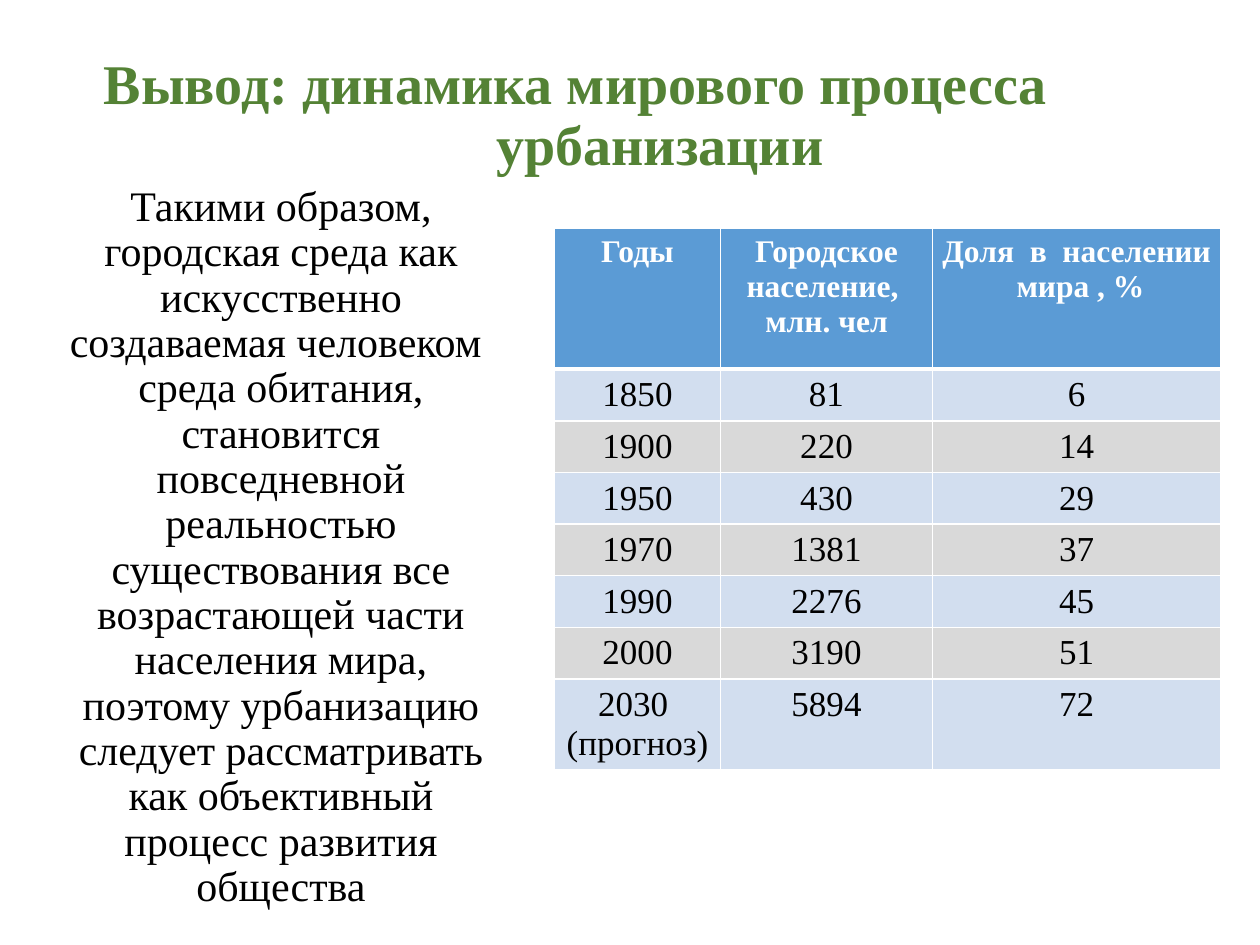
from lxml.etree import SubElement
from pptx import Presentation
from pptx.dml.color import RGBColor
from pptx.enum.text import MSO_ANCHOR as Anchor, MSO_AUTO_SIZE as AutoSize, PP_ALIGN as Align
from pptx.oxml.ns import qn
from pptx.util import Inches, Pt

GREEN = RGBColor(0x54, 0x82, 0x35)
BLUE = RGBColor(0x5B, 0x9B, 0xD5)
PALE_BLUE = RGBColor(0xD2, 0xDE, 0xEF)
GRAY = RGBColor(0xD9, 0xD9, 0xD9)
WHITE = RGBColor(0xFF, 0xFF, 0xFF)
BLACK = RGBColor(0, 0, 0)

TITLE_FONT = {"size": Pt(32), "bold": True, "color": GREEN}
BODY_FONT = {"size": Pt(24), "bold": False, "color": BLACK}
HEADER_FONT = {"size": Pt(18), "bold": True, "color": WHITE}
CELL_FONT = {"size": Pt(20), "bold": False, "color": BLACK}

TITLE = "Вывод: динамика мирового процесса урбанизации"
CONCLUSION = (
    "Такими образом, городская среда как искусственно создаваемая человеком  "
    "среда обитания, становится повседневной реальностью существования все "
    "возрастающей части населения мира, поэтому урбанизацию следует "
    "рассматривать как объективный процесс развития общества"
)
URBANIZATION = [
    ("Годы", "Городское население,  млн. чел", "Доля  в  населении  мира , %"),
    ("1850", "81", "6"),
    ("1900", "220", "14"),
    ("1950", "430", "29"),
    ("1970", "1381", "37"),
    ("1990", "2276", "45"),
    ("2000", "3190", "51"),
    ("2030  (прогноз)", "5894", "72"),
]


def set_all(target, values):
    for name, value in values.items():
        setattr(target, name, value)


def write_centred(frame, wording, font_values):
    paragraph = frame.paragraphs[0]
    paragraph.alignment = Align.CENTER
    run = paragraph.add_run()
    run.text = wording
    values = dict(font_values, name="Times New Roman")
    run.font.color.rgb = values.pop("color")
    set_all(run.font, values)
    return paragraph


def place(holder, box):
    set_all(holder, dict(zip(("left", "top", "width", "height"), map(Inches, box))))


def indent(paragraph, left, first_line):
    properties = paragraph._p.get_or_add_pPr()
    properties.set("marL", str(Inches(left)))
    properties.set("indent", str(Inches(first_line)))
    return properties


def build_title(slide, box):
    heading = slide.shapes.title
    place(heading, box)
    set_all(heading.text_frame, {
        "word_wrap": True, "auto_size": AutoSize.NONE, "vertical_anchor": Anchor.BOTTOM,
        "margin_left": Inches(0.07), "margin_right": Inches(0.75),
    })
    paragraph = write_centred(heading.text_frame, TITLE, TITLE_FONT)
    paragraph.line_spacing = 0.9
    indent(paragraph, 1.34, -1.34)


def build_conclusion(slide, box):
    conclusion = slide.placeholders[1]
    place(conclusion, box)
    set_all(conclusion.text_frame, {
        "word_wrap": True, "auto_size": AutoSize.NONE, "vertical_anchor": Anchor.TOP,
    })
    paragraph = write_centred(conclusion.text_frame, CONCLUSION, BODY_FONT)
    SubElement(indent(paragraph, 0, 0), qn("a:buNone"))
    set_all(paragraph, {"line_spacing": 0.9, "space_before": Pt(0)})


def add_borders(cell, widths):
    properties = cell._tc.get_or_add_tcPr()
    for side, width in widths.items():
        line = SubElement(properties, qn(f"a:ln{side}"), w=str(Pt(width)))
        fill = SubElement(line, qn("a:solidFill"))
        SubElement(fill, qn("a:srgbClr"), val=str(WHITE))


def build_table(slide, box):
    column_widths = (1.32, 1.68, 2.29)
    table = slide.shapes.add_table(
        len(URBANIZATION), len(column_widths), *map(Inches, box)).table
    for column, width in zip(table.columns, column_widths):
        column.width = Inches(width)
    for row_index, entries in enumerate(URBANIZATION):
        is_header = row_index == 0
        table.rows[row_index].height = Inches(1.12 if is_header else 0.41)
        band = BLUE if is_header else PALE_BLUE if row_index % 2 else GRAY
        for column_index, entry in enumerate(entries):
            cell = table.cell(row_index, column_index)
            set_all(cell, {
                "margin_left": Inches(0.06), "margin_right": Inches(0.06),
                "margin_top": Inches(0.05), "margin_bottom": Inches(0.05),
            })
            add_borders(cell, {
                "L": 1, "R": 1, "T": 3 if row_index == 1 else 1, "B": 3 if is_header else 1,
            })
            cell.fill.solid()
            cell.fill.fore_color.rgb = band
            write_centred(cell.text_frame, entry, HEADER_FONT if is_header else CELL_FONT)


def main():
    deck = Presentation()
    set_all(deck, {"slide_width": Inches(10), "slide_height": Inches(7.5)})
    slide = deck.slides.add_slide(deck.slide_layouts[1])
    build_title(slide, (0.69, 0.25, 8.44, 1.21))
    build_table(slide, (4.4, 1.81, 5.29, 3.99))
    build_conclusion(slide, (0.37, 1.42, 3.72, 5.33))
    deck.save("out.pptx")


if __name__ == "__main__":
    main()
